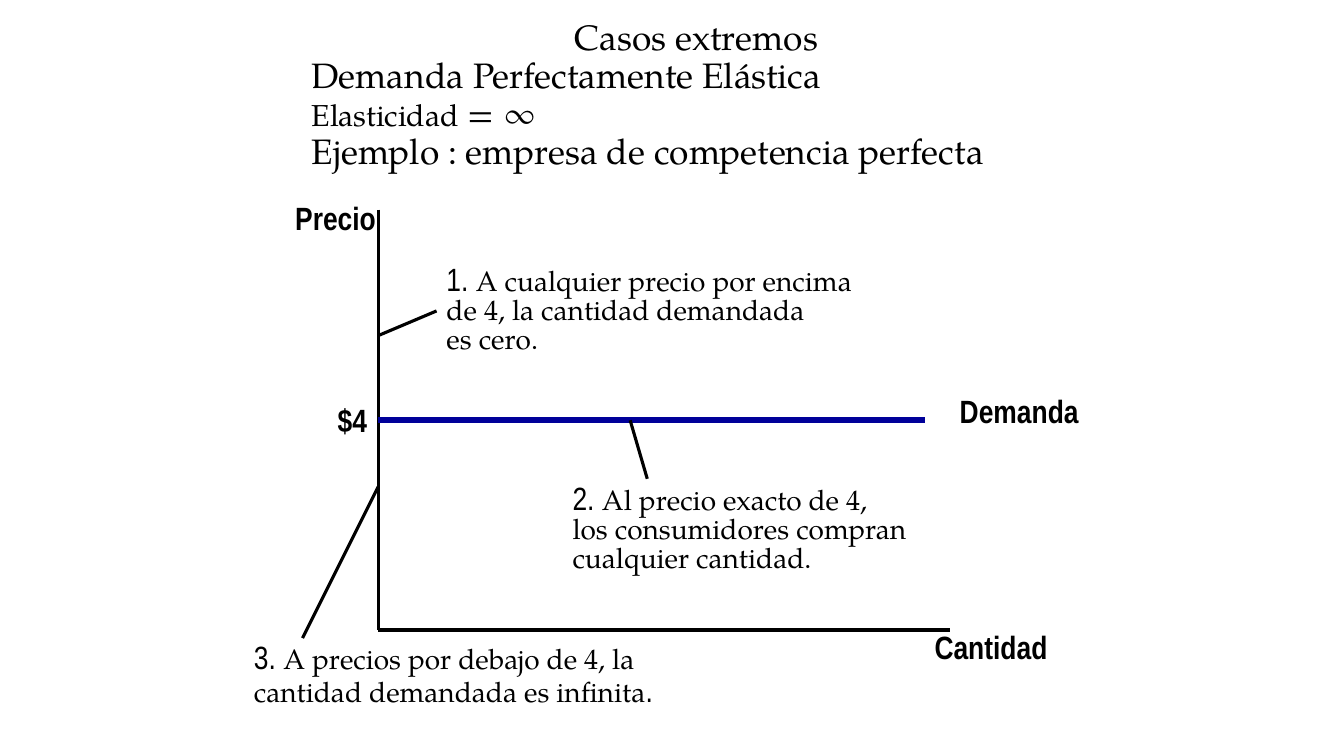
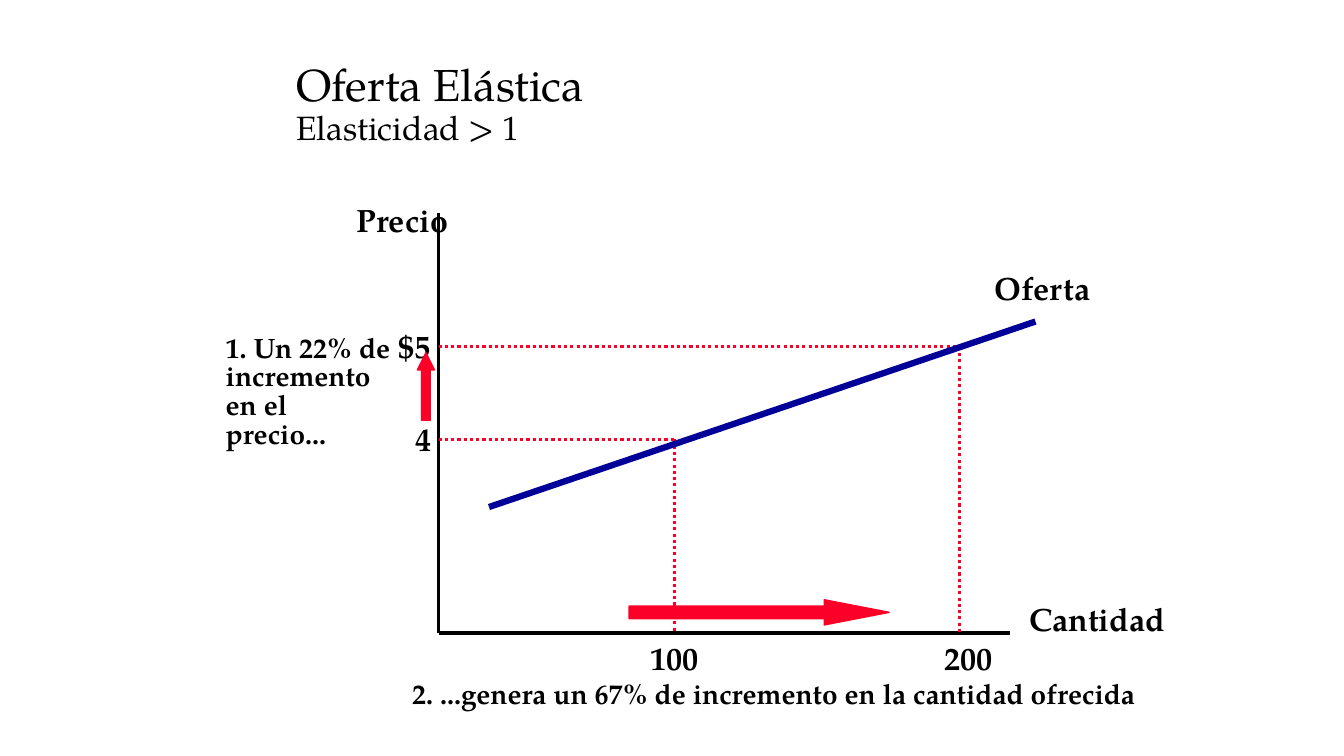
"""Build two slides on extreme demand and elastic supply."""
from lxml.etree import SubElement
from pptx import Presentation
from pptx.dml.color import RGBColor
from pptx.enum.dml import MSO_LINE
from pptx.enum.shapes import MSO_CONNECTOR as Connector, MSO_SHAPE as Shape
from pptx.enum.text import MSO_ANCHOR as Anchor, MSO_AUTO_SIZE as AutoSize, PP_ALIGN as Align
from pptx.oxml.ns import qn
from pptx.util import Pt

PX = 9144
BLACK = RGBColor(0x00, 0x00, 0x00)
WHITE = RGBColor(0xFF, 0xFF, 0xFF)
BLUE = RGBColor(0x00, 0x00, 0x99)
RED = RGBColor(0xFC, 0x01, 0x28)
SERIF = "TeX Gyre Pagella"
NARROW = "Arial Narrow"
LABEL_SIZE = 23
NOTE_SIZE = 20
NOTE_SPACING = 0.85
AXIS_WIDTH, AXIS_HEIGHT = 567, 417


def px(*lengths):
    """Turn px lengths into EMU."""
    return [length * PX for length in lengths]


def add_text(para, text, *, size, font=SERIF, bold=False):
    """Append text to a paragraph, breaking the line at each newline."""
    for index, line in enumerate(text.split("\n")):
        if index:
            para.add_line_break()
        span = para.add_run()
        span.text = line
        span.font.name = font
        span.font.size = Pt(size)
        span.font.bold = bold
        span.font.color.rgb = BLACK


def add_title(slide, place, lines):
    """Place the title; each line is an indent in px and its (text, size) spans."""
    title = slide.shapes.title
    title.left, title.top, title.width, title.height = px(*place)
    frame = title.text_frame
    frame.word_wrap = True
    frame.auto_size = AutoSize.NONE
    frame.vertical_anchor = Anchor.MIDDLE
    for index, (indent, spans) in enumerate(lines):
        para = frame.add_paragraph() if index else frame.paragraphs[0]
        para.alignment = Align.LEFT
        para.line_spacing = 0.9
        para.space_before = Pt(0)
        para._p.get_or_add_pPr().set("marL", str(indent * PX))
        for text, size in spans:
            add_text(para, text, size=size)


def add_box(slide, place, spacing=1.0):
    """Add an unwrapped text box that grows with its text."""
    box = slide.shapes.add_textbox(*px(*place))
    frame = box.text_frame
    frame.word_wrap = False
    frame.auto_size = AutoSize.SHAPE_TO_FIT_TEXT
    frame.paragraphs[0].line_spacing = spacing
    return box


def add_label(slide, text, x, y, width, font=SERIF):
    """Add a bold chart label."""
    box = add_box(slide, (x, y, width, 49))
    add_text(box.text_frame.paragraphs[0], text, size=LABEL_SIZE, font=font, bold=True)


def add_note(slide, number, text, place, closing=""):
    """Add a white numbered note."""
    box = add_box(slide, place, NOTE_SPACING)
    box.fill.solid()
    box.fill.fore_color.rgb = WHITE
    para = box.text_frame.paragraphs[0]
    add_text(para, f"{number}. ", size=LABEL_SIZE, font=NARROW)
    add_text(para, text, size=NOTE_SIZE)
    if closing:
        add_text(para, closing, size=LABEL_SIZE, font=NARROW)
    return box


def add_line(slide, start, end, color=BLACK, width=2.25, dash=None):
    """Draw a straight line between two points."""
    line = slide.shapes.add_connector(Connector.STRAIGHT, *px(*start, *end))
    line.line.color.rgb = color
    line.line.width = Pt(width)
    if dash:
        line.line.dash_style = dash
    SubElement(line._element.spPr, qn("a:effectLst"))
    return line


def add_curve(slide, start, end):
    """Draw a thick supply or demand line."""
    add_line(slide, start, end, BLUE, 4.5)


def add_guide(slide, start, end):
    """Draw a dotted guide line."""
    add_line(slide, start, end, RED, dash=MSO_LINE.ROUND_DOT)


def add_axes(slide, x, top):
    """Draw the price and quantity axes."""
    base = top + AXIS_HEIGHT
    add_line(slide, (x, top), (x, base))
    add_line(slide, (x, base), (x + AXIS_WIDTH, base))


def add_arrow(slide, kind, place, head):
    """Draw a red block arrow."""
    arrow = slide.shapes.add_shape(kind, *px(*place))
    arrow.shadow.inherit = False
    arrow.adjustments[0] = 0.5
    arrow.adjustments[1] = head
    arrow.fill.solid()
    arrow.fill.fore_color.rgb = RED
    arrow.line.color.rgb = RED
    arrow.line.width = Pt(1)


def build_demand(slide):
    """Build the perfectly elastic demand slide."""
    add_title(slide, (299, 42, 828, 107), [
        (261, [("Casos extremos", 25.2)]),
        (0, [("Demanda Perfectamente Elástica", 25.2)]),
        (0, [("Elasticidad", 21.6), (" = ∞", 25.2)]),
        (0, [("Ejemplo : empresa de competencia perfecta", 25.2)]),
    ])
    axis_x, price_y = 375, 417
    add_axes(slide, axis_x, 208)
    for text, x, y, width in (("Cantidad", 917, 617, 132), ("Precio", 283, 192, 100),
                              ("Demanda", 942, 383, 138), ("$4", 325, 392, 49)):
        add_label(slide, text, x, y, width, NARROW)
    add_curve(slide, (axis_x, price_y), (917, price_y))
    above = add_note(slide, 1, "A cualquier precio por encima\nde 4, la cantidad demandada\nes cero.",
                     (433, 258, 433, 101))
    add_line(slide, (axis_x, 333), (433, 308)).end_connect(above, 1)
    add_note(slide, 2, "Al precio exacto de 4,\nlos consumidores compran\ncualquier cantidad.",
             (558, 475, 355, 101))
    add_line(slide, (625, price_y), (642, 475))
    add_note(slide, 3, "A precios por debajo de 4, la\ncantidad demandada es infinita",
             (242, 633, 420, 76), closing=".")
    add_line(slide, (300, 633), (axis_x, 483))


def build_supply(slide):
    """Build the elastic supply slide."""
    add_title(slide, (284, 42, 883, 125), [
        (0, [("Oferta Elástica", 32)]),
        (0, [("Elasticidad > 1", 24)]),
    ])
    axis_x, top = 435, 211
    base = top + AXIS_HEIGHT
    add_axes(slide, axis_x, top)
    for text, x, y, width in (("Cantidad", 1011, 590, 156), ("Precio", 344, 194, 112),
                              ("4", 402, 411, 36), ("$5", 385, 319, 52),
                              ("100", 635, base, 69), ("200", 927, base, 69),
                              ("Oferta", 977, 261, 115)):
        add_label(slide, text, x, y, width)
    for quantity_x, price_y in ((669, 436), (952, 344)):
        add_guide(slide, (axis_x, price_y), (quantity_x, price_y))
        add_guide(slide, (quantity_x, price_y), (quantity_x, base))
    for text, place, spacing in (
        ("1. Un 22% de\nincremento\nen el\nprecio...", (214, 328, 185, 124), NOTE_SPACING),
        ("2. ...genera un 67% de incremento en la cantidad ofrecida", (399, 666, 744, 44), 1.0),
    ):
        box = add_box(slide, place, spacing)
        add_text(box.text_frame.paragraphs[0], text, size=NOTE_SIZE, bold=True)
    add_arrow(slide, Shape.UP_ARROW, (414, 350, 17, 67), 1)
    add_curve(slide, (485, 503), (1027, 319))
    add_arrow(slide, Shape.RIGHT_ARROW, (624, 595, 258, 25), 2.58)


def main():
    """Build and save the deck."""
    deck = Presentation()
    deck.slide_width, deck.slide_height = px(1333, 750)
    title_only = deck.slide_layouts[5]
    for build in (build_demand, build_supply):
        build(deck.slides.add_slide(title_only))
    deck.save("out.pptx")


if __name__ == "__main__":
    main()
